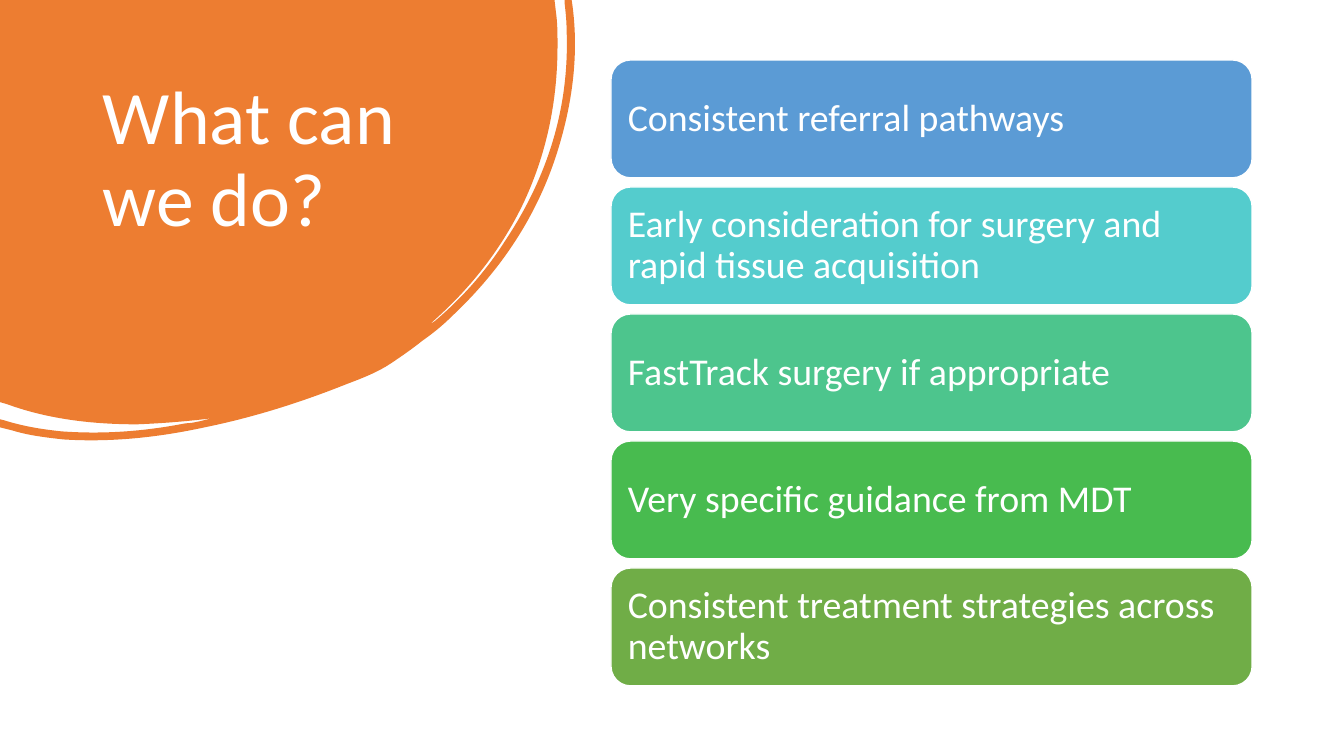
from dataclasses import dataclass

from lxml.etree import SubElement
from pptx import Presentation
from pptx.dml.color import RGBColor as RGB
from pptx.enum.shapes import MSO_SHAPE as Shape
from pptx.enum.text import MSO_ANCHOR as Anchor, MSO_AUTO_SIZE as Fit, PP_ALIGN as Align
from pptx.oxml.ns import qn
from pptx.util import Inches, Pt

TITLE = "What can we do?"
ACTIONS = [
    ("Consistent referral pathways", "5B9BD5"),
    ("Early consideration for surgery and rapid tissue acquisition", "54CCCD"),
    ("FastTrack surgery if appropriate", "4DC58D"),
    ("Very specific guidance from MDT", "48BB4F"),
    ("Consistent treatment strategies across networks", "70AD47"),
]

# Outline of the blob in inches: two numbers make a line, six make a curve.
BLOB = [
    (0, 0), (5.5, 0), (5.52, 0.17),
    (5.53, 0.26, 5.53, 0.36, 5.53, 0.45),
    (5.53, 1.01, 5.42, 1.54, 5.18, 2.04),
    (4.96, 2.49, 4.65, 2.88, 4.27, 3.21),
    (4.29, 3.21, 4.3, 3.19, 4.32, 3.18),
    (4.59, 2.95, 4.82, 2.69, 5.01, 2.39),
    (5.43, 1.76, 5.65, 1.07, 5.62, 0.3),
    (5.62, 0.21, 5.61, 0.12, 5.6, 0.03),
    (5.6, 0), (5.67, 0), (5.68, 0.07),
    (5.74, 0.54, 5.68, 1.02, 5.53, 1.5),
    (5.33, 2.14, 4.97, 2.68, 4.48, 3.14),
    (4.39, 3.23, 4.29, 3.31, 4.19, 3.38),
    (4.09, 3.46, 3.99, 3.53, 3.87, 3.61),
    (3.75, 3.69, 3.6, 3.75, 3.44, 3.81),
    (2.99, 3.99, 2.52, 4.14, 2.03, 4.24),
    (1.57, 4.34, 1.1, 4.39, 0.63, 4.36),
    (0.45, 4.34, 0.28, 4.32, 0.12, 4.27),
    (0, 4.24), (0, 4.16), (0.04, 4.17),
    (0.23, 4.23, 0.42, 4.26, 0.61, 4.28),
    (1.03, 4.31, 1.43, 4.28, 1.84, 4.2),
    (1.89, 4.2, 1.93, 4.19, 1.98, 4.18),
    (2.02, 4.17, 2.06, 4.16, 2.1, 4.15),
    (1.86, 4.18, 1.61, 4.2, 1.36, 4.21),
    (0.92, 4.21, 0.48, 4.16, 0.07, 4.01),
    (0, 3.99),
]
BLOB_SIZE = Inches(5.71), Inches(4.37)


@dataclass(frozen=True)
class Theme:
    font: str = "Calibri"
    white: RGB = RGB(255, 255, 255)
    accent: RGB = RGB.from_string("ED7D31")
    title: Pt = Pt(54)
    body: Pt = Pt(27)


THEME = Theme()
LEFT, TOP, WIDTH, HEIGHT, PITCH = 6.06, 0.595, 6.36, 1.17, 1.26
INSET = Inches(0.11)


def write(shape, text, size, anchor):
    frame = shape.text_frame
    frame.text = text
    frame.word_wrap = True
    frame.auto_size = Fit.NONE
    frame.vertical_anchor = anchor
    para = frame.paragraphs[0]
    para.alignment = Align.LEFT
    para.line_spacing = 0.9
    para.font.name = THEME.font
    para.font.size = size
    para.font.color.rgb = THEME.white
    return frame


def paint(shape, color):
    shape.shadow.inherit = False
    shape.fill.solid()
    shape.fill.fore_color.rgb = color


def bend(outline):
    """Turn the straight segments that have control points into curves."""
    for line, part in zip(list(outline.iter(qn("a:lnTo"))), BLOB[1:]):
        if len(part) == 6:
            line.tag = qn("a:cubicBezTo")
            line.clear()
            for x, y in zip(part[::2], part[1::2]):
                SubElement(line, qn("a:pt"), x=str(Inches(x)), y=str(Inches(y)))


def add_blob(slide):
    first, *rest = [(Inches(part[-2]), Inches(part[-1])) for part in BLOB]
    pen = slide.shapes.build_freeform(*first)
    pen.add_line_segments(rest, close=True)
    blob = pen.convert_to_shape()
    blob.width, blob.height = BLOB_SIZE
    outline = next(blob.element.iter(qn("a:path")))
    for key, length in zip("wh", BLOB_SIZE):
        outline.set(key, str(length))
    bend(outline)
    paint(blob, THEME.accent)
    blob.line.fill.background()
    return blob


def add_card(slide, row, text, color):
    card = slide.shapes.add_shape(
        Shape.ROUNDED_RECTANGLE, Inches(LEFT), Inches(TOP + row * PITCH),
        Inches(WIDTH), Inches(HEIGHT))
    paint(card, RGB.from_string(color))
    card.line.color.rgb = THEME.white
    card.line.width = Pt(1)
    frame = write(card, text, THEME.body, Anchor.MIDDLE)
    frame.margin_left = frame.margin_right = INSET
    frame.margin_top = frame.margin_bottom = INSET


def main():
    deck = Presentation()
    deck.slide_width, deck.slide_height = Inches(13.33), Inches(7.5)
    slide = deck.slides.add_slide(deck.slide_layouts[5])
    title = slide.shapes.title
    title.left, title.top = Inches(0.92), Inches(0.74)
    title.width, title.height = Inches(3.52), Inches(2.22)
    write(title, TITLE, THEME.title, Anchor.TOP)
    blob = add_blob(slide)
    title.element.addprevious(blob.element)
    for row, (text, color) in enumerate(ACTIONS):
        add_card(slide, row, text, color)
    deck.save("out.pptx")


if __name__ == "__main__":
    main()
